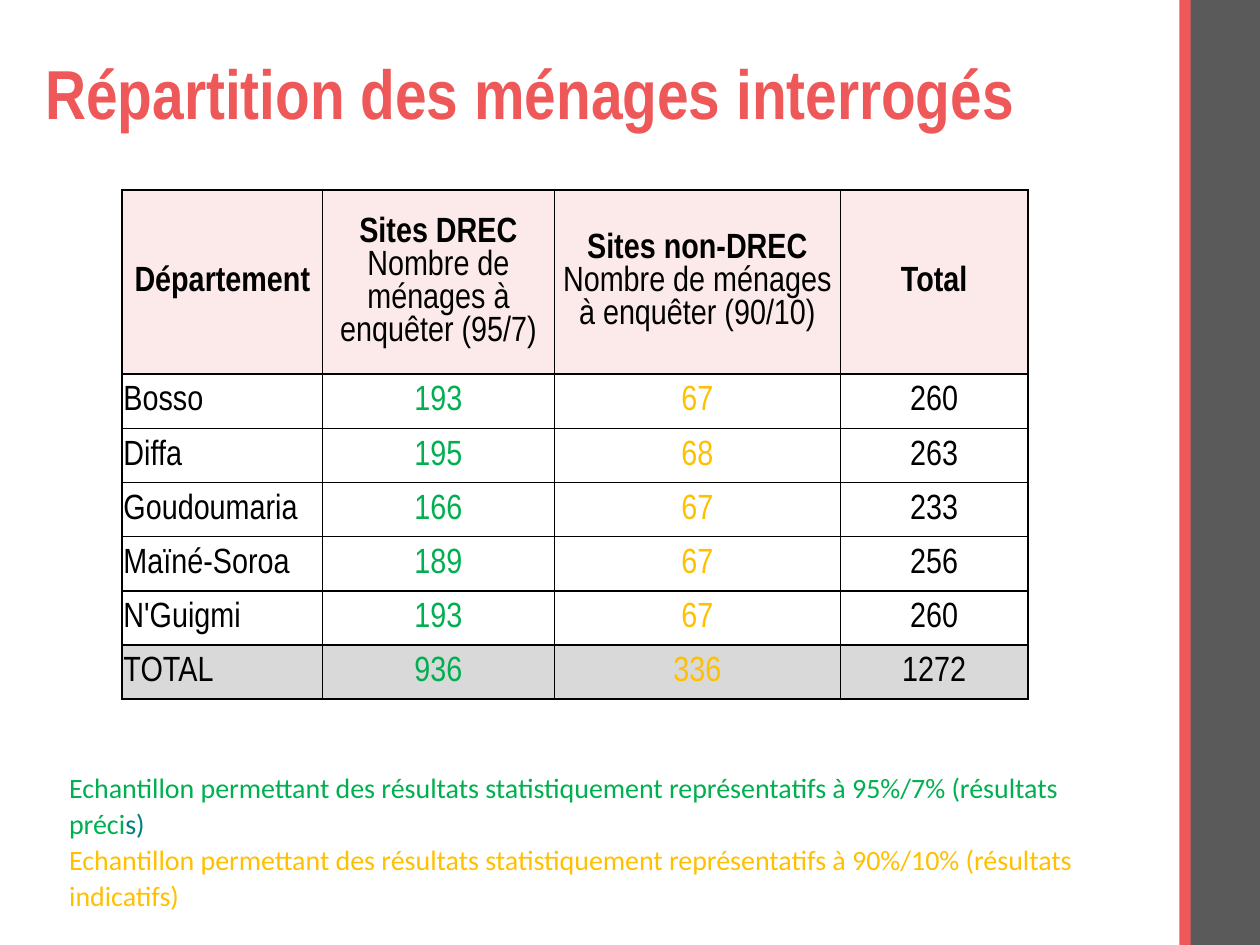
from lxml import etree
from pptx import Presentation
from pptx.dml.color import RGBColor
from pptx.enum.shapes import MSO_SHAPE
from pptx.enum.text import MSO_ANCHOR, MSO_AUTO_SIZE, PP_ALIGN
from pptx.oxml.ns import qn
from pptx.util import Inches, Pt

RECTANGLE = MSO_SHAPE.RECTANGLE
MIDDLE, TOP = MSO_ANCHOR.MIDDLE, MSO_ANCHOR.TOP
NO_FIT = MSO_AUTO_SIZE.NONE
LEFT, CENTER = PP_ALIGN.LEFT, PP_ALIGN.CENTER

CORAL = RGBColor(0xEE, 0x58, 0x59)
SLATE = RGBColor(0x5A, 0x5A, 0x5A)
GREEN = RGBColor(0x00, 0xB0, 0x50)
TEAL = RGBColor(0x00, 0x80, 0x80)
AMBER = RGBColor(0xFF, 0xC0, 0x00)
BLACK = RGBColor(0x00, 0x00, 0x00)
WHITE = RGBColor(0xFF, 0xFF, 0xFF)
PINK = RGBColor(0xFC, 0xEA, 0xEA)
GREY = RGBColor(0xD9, 0xD9, 0xD9)

HEADERS = [
    ["Département"],
    ["Sites DREC", "Nombre de ménages à enquêter (95/7)"],
    ["Sites non-DREC", "Nombre de ménages à enquêter (90/10)"],
    ["Total"],
]
HOUSEHOLDS = [
    ("Bosso", 193, 67),
    ("Diffa", 195, 68),
    ("Goudoumaria", 166, 67),
    ("Maïné-Soroa", 189, 67),
    ("N'Guigmi", 193, 67),
    ("TOTAL", 936, 336),
]
COLUMN_WIDTHS = [1.59, 1.84, 2.27, 1.49]
COLUMN_COLORS = [BLACK, GREEN, AMBER, BLACK]
HEADER_HEIGHT, ROW_HEIGHT = 1.46, 0.43

NOTES = [
    [("Echantillon permettant des résultats statistiquement représentatifs "
      "à 95%/7% (résultats préci", GREEN), ("s)", TEAL)],
    [("Echantillon permettant des résultats statistiquement représentatifs "
      "à 90%/10% (résultats indicatifs)", AMBER)],
]


def add_span(para, text, font, size, color, bold=False):
    span = para.add_run()
    span.text = text
    span.font.name = font
    span.font.size = Pt(size)
    span.font.bold = bold
    span.font.color.rgb = color


def add_band(page, left, top, width, height, color):
    band = page.shapes.add_shape(
        RECTANGLE, Inches(left), Inches(top), Inches(width), Inches(height))
    band.shadow.inherit = False
    band.fill.solid()
    band.fill.fore_color.rgb = color
    band.line.fill.background()


def place_title(page, left, top, width, height):
    title = page.shapes.title
    title.left, title.top = Inches(left), Inches(top)
    title.width, title.height = Inches(width), Inches(height)
    frame = title.text_frame
    frame.auto_size = NO_FIT
    frame.word_wrap = True
    frame.vertical_anchor = MIDDLE
    para = frame.paragraphs[0]
    para.alignment = LEFT
    para.line_spacing = 0.9
    add_span(para, "Répartition des ménages interrogés",
             "Arial Narrow", 39.6, CORAL, True)


def add_borders(cell):
    properties = cell._tc.get_or_add_tcPr()
    for index, side in enumerate(("lnL", "lnR", "lnT", "lnB")):
        line = etree.Element(qn(f"a:{side}"), w=str(Pt(1)))
        fill = etree.SubElement(line, qn("a:solidFill"))
        etree.SubElement(fill, qn("a:srgbClr"), val=str(BLACK))
        properties.insert(index, line)


def fill_cell(cell, lines, color, fill, alignment, header=False):
    cell.margin_left = cell.margin_top = cell.margin_right = Inches(0.01)
    cell.margin_bottom = 0
    cell.vertical_anchor = MIDDLE
    cell.fill.solid()
    cell.fill.fore_color.rgb = fill
    add_borders(cell)
    frame = cell.text_frame
    for index, text in enumerate(lines):
        para = frame.add_paragraph() if index else frame.paragraphs[0]
        para.alignment = alignment
        add_span(para, text, "Arial Narrow", 20, color, header and index == 0)


def add_household_table(page, left, top):
    height = HEADER_HEIGHT + ROW_HEIGHT * len(HOUSEHOLDS)
    table = page.shapes.add_table(
        len(HOUSEHOLDS) + 1, len(HEADERS), Inches(left), Inches(top),
        Inches(sum(COLUMN_WIDTHS)), Inches(height)).table
    table.first_row = table.horz_banding = False
    for column, width in zip(table.columns, COLUMN_WIDTHS):
        column.width = Inches(width)
    for index, row in enumerate(table.rows):
        row.height = Inches(ROW_HEIGHT if index else HEADER_HEIGHT)

    for column, lines in enumerate(HEADERS):
        fill_cell(table.cell(0, column), lines, BLACK, PINK, CENTER, True)
    for row, (name, drec, other) in enumerate(HOUSEHOLDS, 1):
        fill = GREY if name == "TOTAL" else WHITE
        for column, value in enumerate((name, drec, other, drec + other)):
            fill_cell(table.cell(row, column), [str(value)],
                      COLUMN_COLORS[column], fill, CENTER if column else LEFT)


def add_notes(page, left, top, width, height):
    box = page.shapes.add_textbox(
        Inches(left), Inches(top), Inches(width), Inches(height))
    frame = box.text_frame
    frame.word_wrap = True
    frame.vertical_anchor = TOP
    for index, spans in enumerate(NOTES):
        para = frame.add_paragraph() if index else frame.paragraphs[0]
        para.line_spacing = 1.07
        for text, color in spans:
            add_span(para, text, "Calibri", 16, color)


def main():
    deck = Presentation()
    deck.slide_width, deck.slide_height = Inches(10), Inches(7.5)
    page = deck.slides.add_slide(deck.slide_layouts[5])
    add_band(page, 9.43, 0, 0.57, 7.5, SLATE)
    add_band(page, 9.36, 0, 0.09, 7.5, CORAL)
    place_title(page, 0.26, 0.4, 8.69, 0.74)
    add_notes(page, 0.45, 6.05, 8.69, 0.99)
    add_household_table(page, 0.97, 1.51)
    deck.save("out.pptx")


if __name__ == "__main__":
    main()
